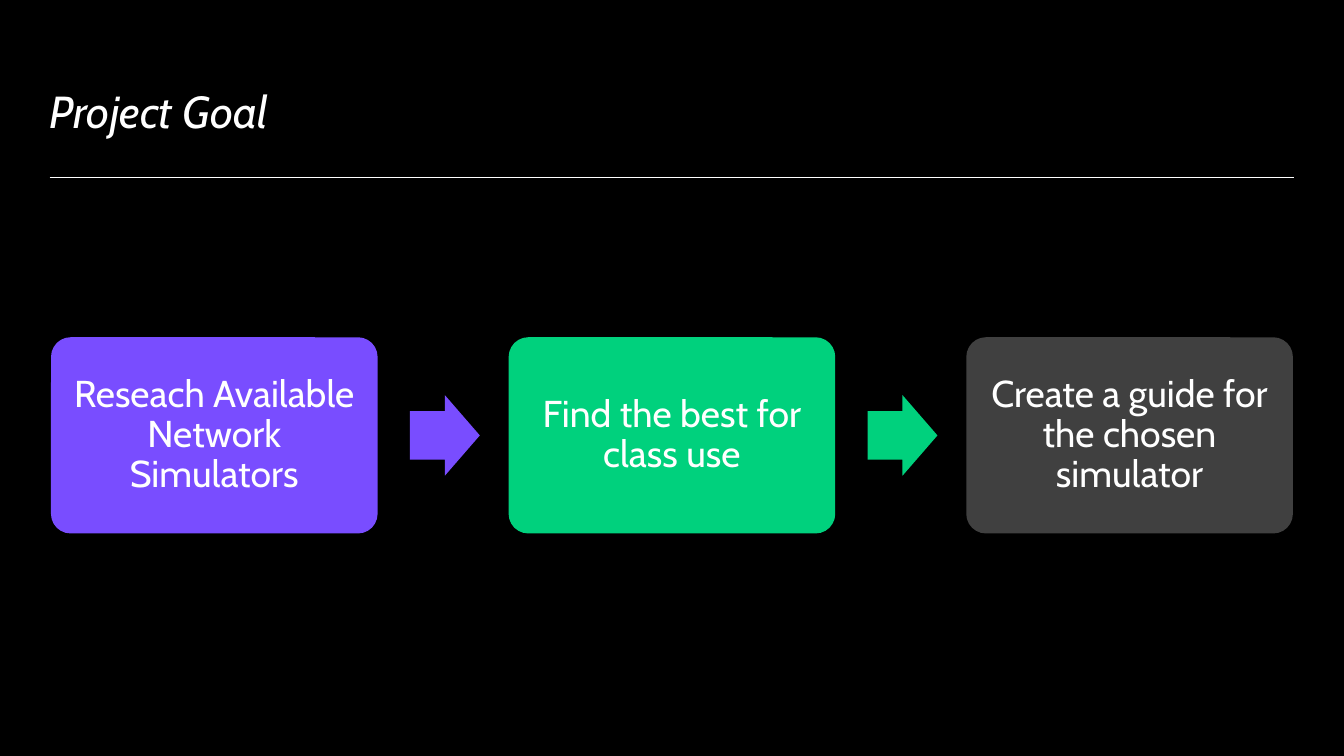
from dataclasses import dataclass
from lxml import etree
from pptx import Presentation
from pptx.dml.color import RGBColor
from pptx.enum.shapes import MSO_CONNECTOR, MSO_SHAPE
from pptx.enum.text import MSO_ANCHOR, PP_ALIGN
from pptx.oxml.ns import qn
from pptx.util import Inches, Pt


@dataclass(frozen=True)
class Theme:
    font: str = "Cabin"
    background: str = "000000"
    text: str = "FFFFFF"
    purple: str = "794DFF"
    green: str = "00D17D"
    gray: str = "404040"
    title_size: int = 24
    step_size: int = 20
    rule_width: float = 0.5


THEME = Theme()
TITLE = "Project Goal"
STEPS = [
    ("Reseach Available Network Simulators", THEME.purple),
    ("Find the best for class use", THEME.green),
    ("Create a guide for the chosen simulator", THEME.gray),
]

SLIDE_W = 10
SLIDE_H = SLIDE_W * 9 / 16
MARGIN = 0.38
STEP_W, STEP_H, STEP_TOP = 2.43, 1.46, 2.51
ARROW_W, ARROW_H, ARROW_GAP = 0.52, 0.6, 0.24


def write(sp, text, size, italic=False, align=PP_ALIGN.LEFT,
          anchor=MSO_ANCHOR.MIDDLE, inset=0.0):
    tf = sp.text_frame
    tf.word_wrap = True
    tf.vertical_anchor = anchor
    tf.margin_left = tf.margin_right = Inches(inset)
    tf.margin_top = tf.margin_bottom = Inches(inset)
    p = tf.paragraphs[0]
    p.alignment = align
    p.line_spacing = 0.9
    r = p.add_run()
    r.text = text
    r.font.name = THEME.font
    r.font.size = Pt(size)
    r.font.italic = italic
    r.font.color.rgb = RGBColor.from_string(THEME.text)


def add_block(s, kind, left, top, width, height, color, adjustments):
    sp = s.shapes.add_shape(kind, Inches(left), Inches(top),
                            Inches(width), Inches(height))
    for i, value in enumerate(adjustments):
        sp.adjustments[i] = value
    sp.shadow.inherit = False
    sp.fill.solid()
    sp.fill.fore_color.rgb = RGBColor.from_string(color)
    sp.line.fill.background()
    return sp


def add_header(s):
    title = s.shapes.add_textbox(Inches(0.37), Inches(0.32),
                                 Inches(9.27), Inches(0.71))
    write(title, TITLE, THEME.title_size, italic=True,
          anchor=MSO_ANCHOR.BOTTOM)
    rule = s.shapes.add_connector(MSO_CONNECTOR.STRAIGHT, Inches(0.37),
                                  Inches(1.32), Inches(9.63), Inches(1.32))
    rule.line.color.rgb = RGBColor.from_string(THEME.text)
    rule.line.width = Pt(THEME.rule_width)
    etree.SubElement(rule.element.spPr, qn("a:effectLst"))


def add_steps(s):
    pitch = (SLIDE_W - 2 * MARGIN - STEP_W) / (len(STEPS) - 1)
    arrow_top = STEP_TOP + (STEP_H - ARROW_H) / 2
    for i, (text, color) in enumerate(STEPS):
        left = MARGIN + i * pitch
        step = add_block(s, MSO_SHAPE.ROUNDED_RECTANGLE, left, STEP_TOP,
                         STEP_W, STEP_H, color, [0.1])
        write(step, text, THEME.step_size, align=PP_ALIGN.CENTER, inset=0.08)
        if i < len(STEPS) - 1:
            add_block(s, MSO_SHAPE.RIGHT_ARROW, left + STEP_W + ARROW_GAP,
                      arrow_top, ARROW_W, ARROW_H, color, [0.6, 0.5])


def main():
    prs = Presentation()
    prs.slide_width = Inches(SLIDE_W)
    prs.slide_height = Inches(SLIDE_H)
    s = prs.slides.add_slide(prs.slide_layouts[6])
    s.background.fill.solid()
    s.background.fill.fore_color.rgb = RGBColor.from_string(THEME.background)
    add_header(s)
    add_steps(s)
    prs.save("out.pptx")


if __name__ == "__main__":
    main()
